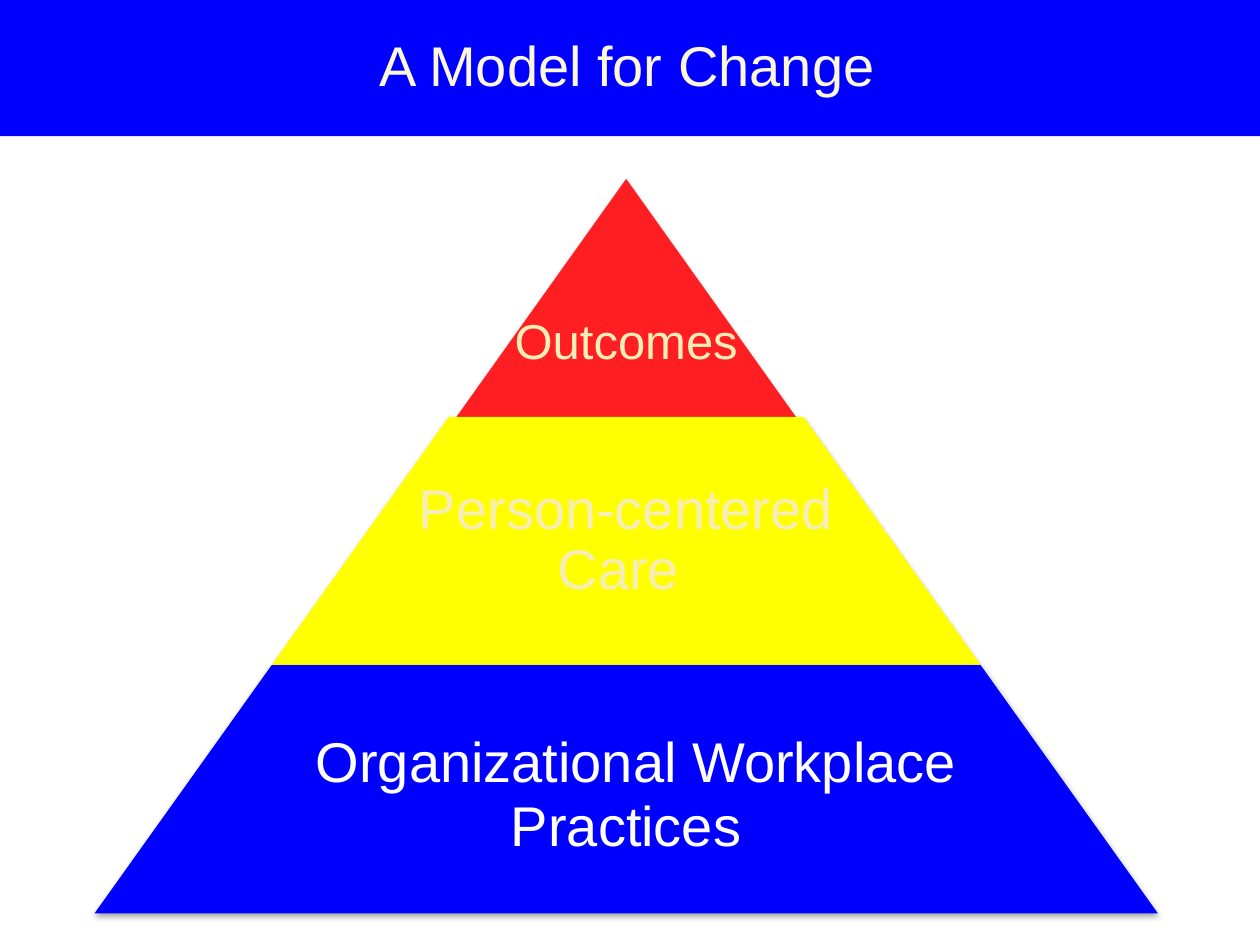
from lxml import etree
from pptx import Presentation
from pptx.dml.color import RGBColor
from pptx.enum.shapes import MSO_SHAPE
from pptx.enum.text import MSO_ANCHOR, PP_ALIGN
from pptx.util import Inches, Pt

RECT, TRAPEZOID = MSO_SHAPE.RECTANGLE, MSO_SHAPE.TRAPEZOID
MIDDLE, CENTER = MSO_ANCHOR.MIDDLE, PP_ALIGN.CENTER
NS = "http://schemas.openxmlformats.org/drawingml/2006/main"
SHADOW = (
    f'<a:effectLst xmlns:a="{NS}">'
    '<a:outerShdw blurRad="39370" dist="22860" dir="5400000" rotWithShape="0">'
    '<a:srgbClr val="000000"><a:alpha val="35000"/></a:srgbClr>'
    '</a:outerShdw></a:effectLst>'
)
BLUE, RED, YELLOW = "0000FF", "FF1F22", "FFFF00"
CREAM, WHITE = "F6EEB6", "FFFFFF"
CENTER_X, TIER_HEIGHT, SLOPE = 4.97, 1.97, 0.714


def color(value):
    """Return the colour for a hex string."""
    return RGBColor.from_string(value)


def add_block(slide, kind, x, y, w, h, fill):
    """Add a filled shape without outline or shadow."""
    s = slide.shapes.add_shape(kind, Inches(x), Inches(y), Inches(w), Inches(h))
    s.fill.solid()
    s.fill.fore_color.rgb = color(fill)
    s.line.fill.background()
    s.shadow.inherit = False
    return s


def set_text(s, runs, insets):
    """Write centred runs of (text, size, colour) with left, top, right, bottom insets."""
    tf = s.text_frame
    tf.word_wrap = True
    tf.vertical_anchor = MIDDLE
    tf.margin_left, tf.margin_top, tf.margin_right, tf.margin_bottom = map(Inches, insets)
    p = tf.paragraphs[0]
    p.alignment = CENTER
    p.line_spacing = 0.9
    for text, size, hex_color in runs:
        r = p.add_run()
        r.text = text
        r.font.name = "Arial"
        r.font.size = Pt(size)
        r.font.color.rgb = color(hex_color)


def add_title(slide, text):
    """Add the title band across the top."""
    s = add_block(slide, RECT, 0, 0, 10, 1.08, BLUE)
    set_text(s, [(text, 32, "FBF7DB")], (0.1, 0.06, 0.14, 0.06))


def add_tier(slide, y, width, fill, label_width, runs, top_inset):
    """Add one pyramid tier and its label."""
    s = add_block(slide, TRAPEZOID, CENTER_X - width / 2, y, width, TIER_HEIGHT, fill)
    s.adjustments[0] = SLOPE
    sp_pr = s.element.spPr
    sp_pr.replace(sp_pr.find(f"{{{NS}}}effectLst"), etree.fromstring(SHADOW))
    label = slide.shapes.add_textbox(
        Inches(CENTER_X - label_width / 2), Inches(y), Inches(label_width), Inches(TIER_HEIGHT))
    set_text(label, runs, (0.05, top_inset, 0.05, 0.05))


def main():
    """Build the slide."""
    prs = Presentation()
    prs.slide_width, prs.slide_height = Inches(10), Inches(7.5)
    slide = prs.slides.add_slide(prs.slide_layouts[6])
    add_title(slide, "A Model for Change")
    tiers = [
        (1.42, 2.81, RED, 2.81, [("Outcomes", 28, CREAM)], 0.7),
        (3.31, 5.63, YELLOW, 3.66, [("Person-centered Care ", 32, CREAM)], 0.05),
        (5.28, 8.44, BLUE, 5.49,
         [(" ", 41, CREAM), ("Organizational Workplace Practices", 32, WHITE)], 0.05),
    ]
    for tier in tiers:
        add_tier(slide, *tier)
    prs.save("out.pptx")


if __name__ == "__main__":
    main()
